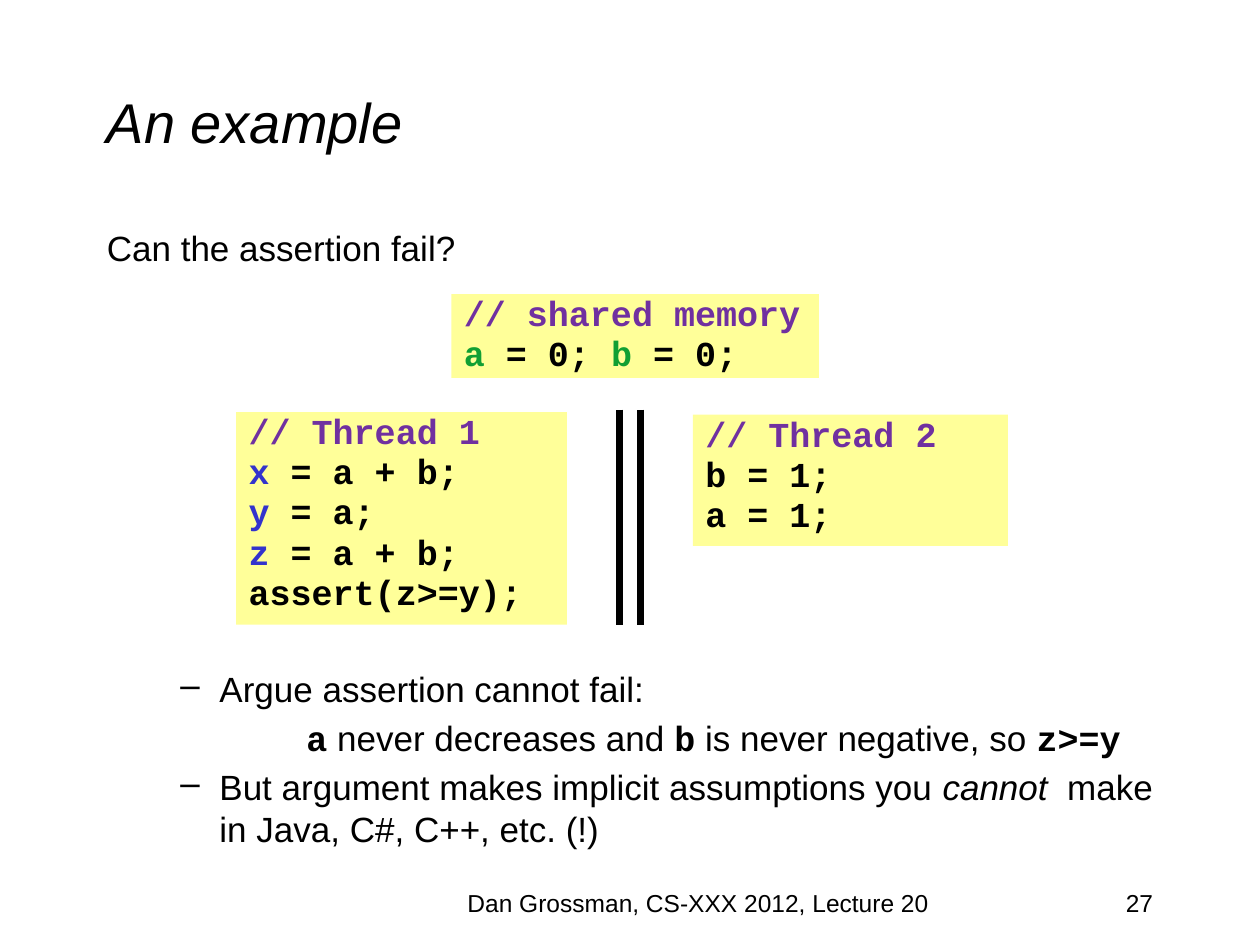
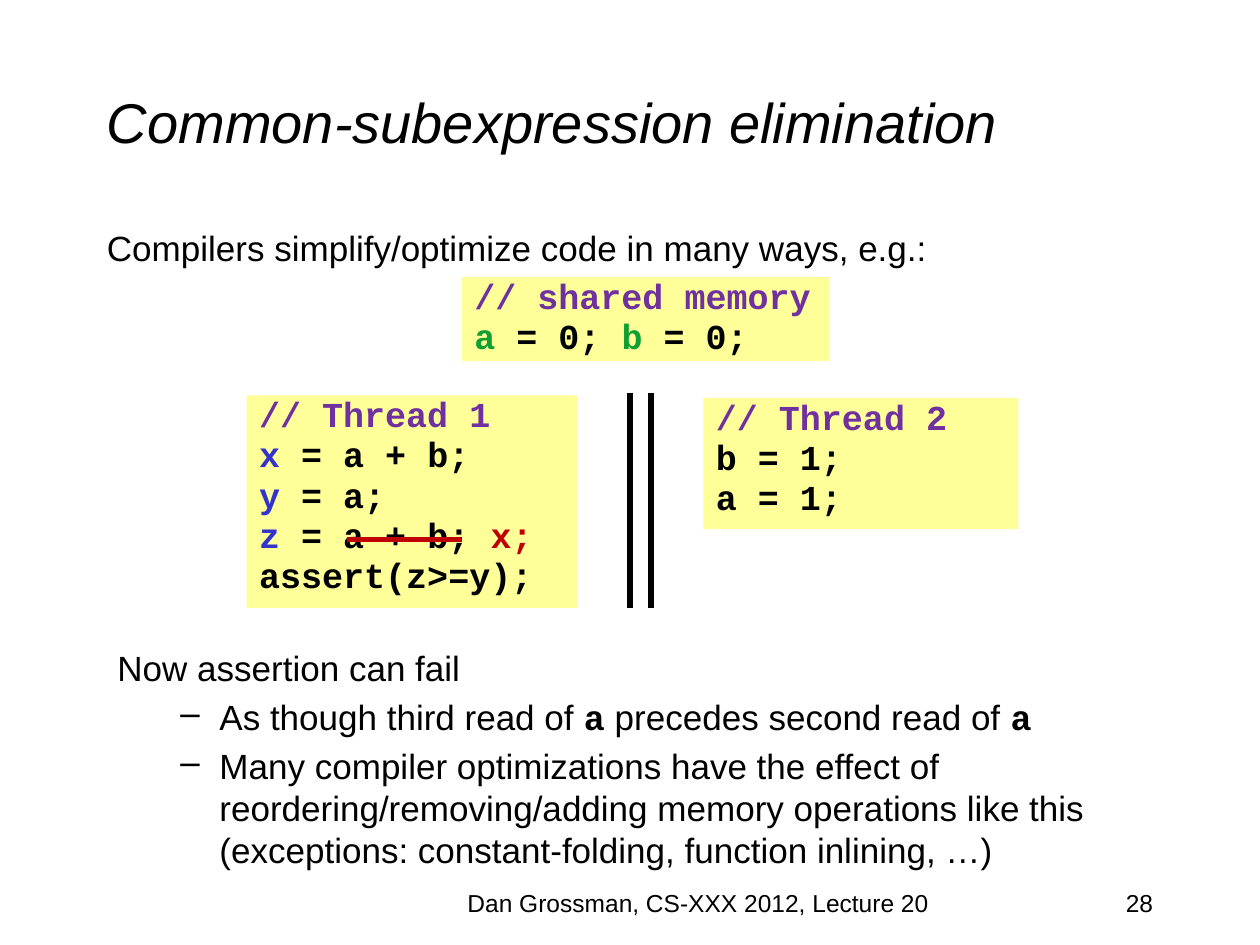
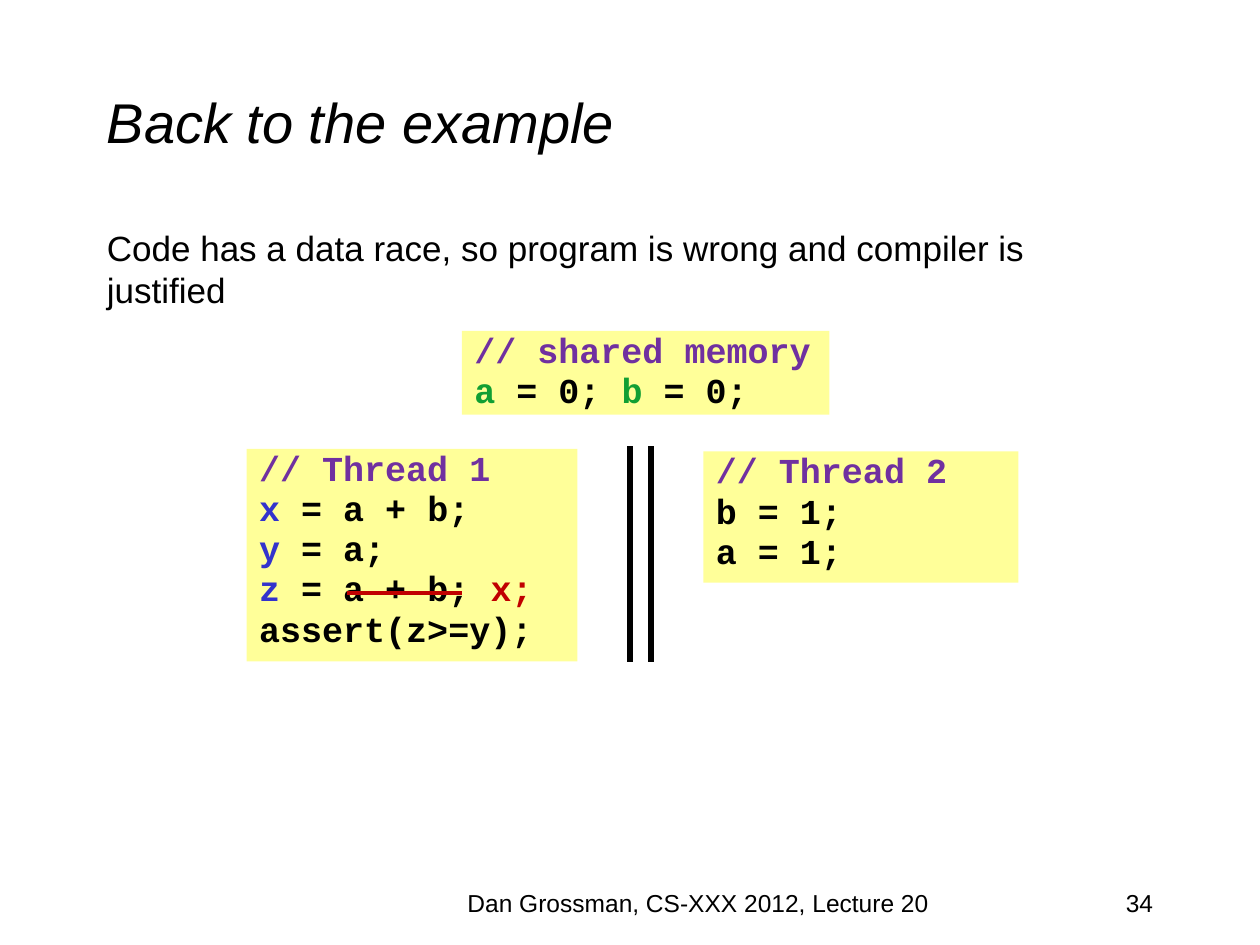
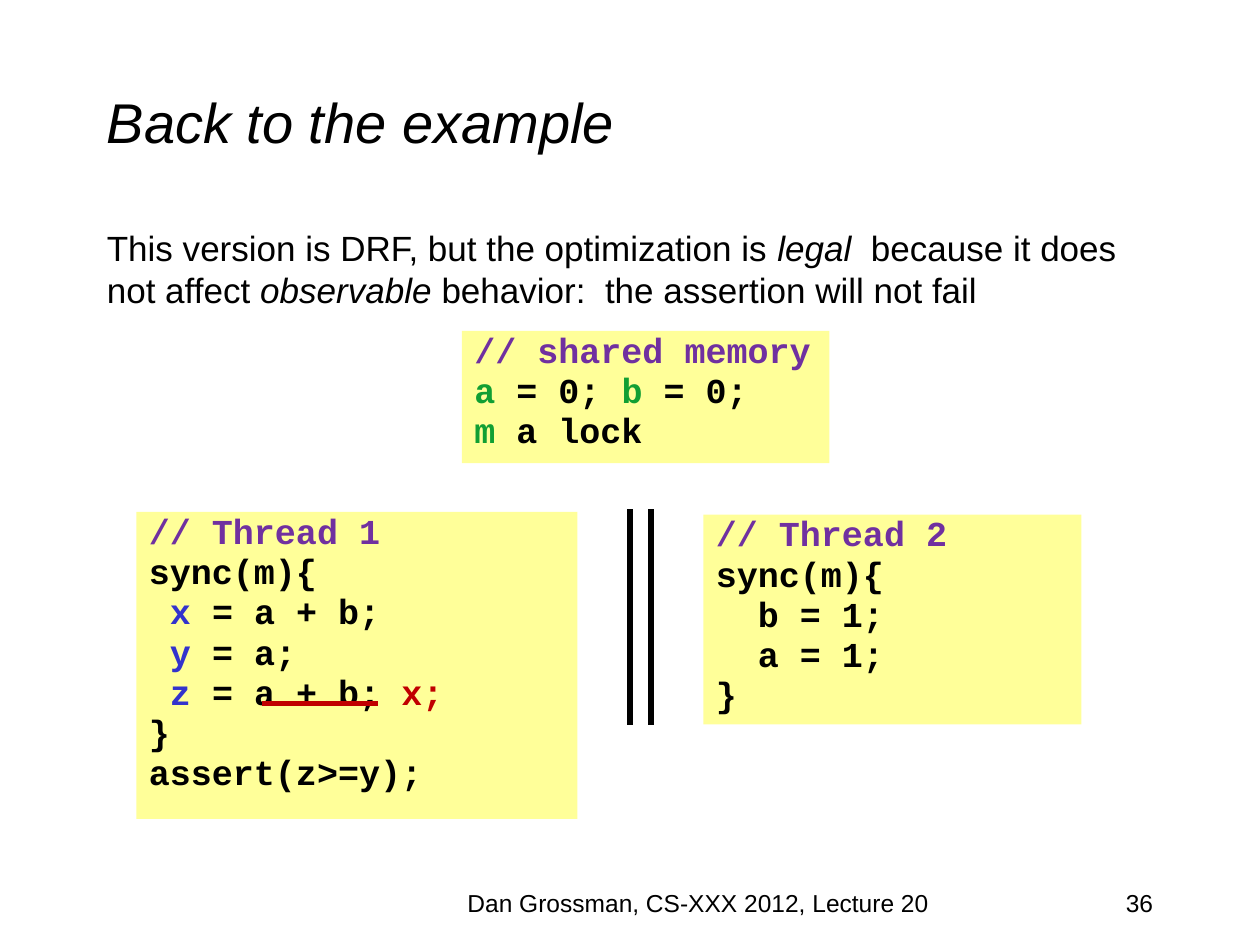
from typing import NamedTuple

from lxml.etree import SubElement
from pptx import Presentation
from pptx.dml.color import RGBColor
from pptx.enum.shapes import MSO_CONNECTOR as Link, MSO_SHAPE as Shape
from pptx.enum.text import MSO_ANCHOR as Anchor, PP_ALIGN as Align
from pptx.oxml.ns import qn
from pptx.util import Inches, Pt

BLACK = RGBColor(0x00, 0x00, 0x00)
PURPLE = RGBColor(0x70, 0x30, 0xA0)
GREEN = RGBColor(0x11, 0x9F, 0x33)
BLUE = RGBColor(0x33, 0x33, 0xCC)
RED = RGBColor(0xC0, 0x00, 0x00)
YELLOW = RGBColor(0xFF, 0xFF, 0x99)

SANS, MONO = "Arial", "Courier New"
FOOTER = "Dan Grossman, CS-XXX 2012, Lecture 20"
COLS, ROWS = 120, 90
WIDTH, HEIGHT = Inches(10), Inches(7.5)


class Run(NamedTuple):
    text: str
    color: RGBColor = BLACK
    font: str = SANS
    bold: bool = False
    italic: bool = False


class Para(NamedTuple):
    runs: list[Run]
    margin: float = 0
    indent: float = 0
    bullet: str = ""
    gap: float = 4
    pitch: float | None = None


class Box(NamedTuple):
    """A place on the grid, in columns and rows."""
    left: float
    top: float
    width: float
    height: float


class Strike(NamedTuple):
    left: float
    drop: float


class Scene(NamedTuple):
    """Code boxes around a pair of bars; heights are in rows."""
    bar: float
    top: float
    shared: list[Para]
    first: list[Para]
    second: list[Para]
    lift: float = 11
    heights: tuple[float, float, float] = (8, 20.25, 12.5)
    widths: tuple[float, float] = (31.5, 30)
    strike: Strike | None = None


class Page(NamedTuple):
    number: int
    title: str
    lead: list[Run]
    scene: Scene
    notes: list[Para] = []
    place: Box = Box(10, 63, 102, 20)


def col(n: float) -> int:
    return round(WIDTH * n / COLS)


def row(n: float) -> int:
    return round(HEIGHT * n / ROWS)


def mono(text: str, color: RGBColor = BLACK) -> Run:
    return Run(text, color, MONO, True)


def slant(text: str) -> Run:
    return Run(text, italic=True)


def line(*runs: Run) -> Para:
    return Para(list(runs), 0.38, -0.38, pitch=19)


def dash(*runs: Run) -> Para:
    return Para(list(runs), 0.81, -0.31, "–")


def assign(name: str, value: str, color: RGBColor = BLUE) -> list[Run]:
    return [mono(f"{name} ", color), mono(f"= {value}")]


def write(frame, paras: list[Para], size: float = 20, align=Align.LEFT,
          anchor=Anchor.TOP) -> None:
    frame.word_wrap = True
    frame.vertical_anchor = anchor
    for i, para in enumerate(paras):
        p = frame.paragraphs[0] if i == 0 else frame.add_paragraph()
        p.alignment = align
        p.space_before = Pt(para.gap)
        if para.pitch:
            p.line_spacing = Pt(para.pitch)
        props = p._p.get_or_add_pPr()
        props.set("marL", str(Inches(para.margin)))
        props.set("indent", str(Inches(para.indent)))
        if para.bullet:
            SubElement(props, qn("a:buChar")).set("char", para.bullet)
        for part in para.runs:
            run = p.add_run()
            run.text = part.text
            font = run.font
            font.name, font.size = part.font, Pt(size)
            font.bold, font.italic = part.bold, part.italic
            font.color.rgb = part.color


def place(box: Box) -> tuple[int, int, int, int]:
    return col(box.left), row(box.top), col(box.width), row(box.height)


def label(slide, box: Box, paras: list[Para], size: float = 20,
          align=Align.LEFT, anchor=Anchor.TOP) -> None:
    write(slide.shapes.add_textbox(*place(box)).text_frame,
          paras, size, align, anchor)


def panel(slide, box: Box, code: list[Para]) -> None:
    shape = slide.shapes.add_shape(Shape.RECTANGLE, *place(box))
    shape.shadow.inherit = False
    shape.fill.solid()
    shape.fill.fore_color.rgb = YELLOW
    shape.line.fill.background()
    write(shape.text_frame, code)


def rule(slide, x: float, y: float, across: float, down: float,
         color: RGBColor, weight: float) -> None:
    link = slide.shapes.add_connector(
        Link.STRAIGHT, col(x), row(y), col(x + across), row(y + down))
    link.line.color.rgb = color
    link.line.width = Pt(weight)
    SubElement(link._element.spPr, qn("a:effectLst"))


def draw(slide, scene: Scene) -> None:
    bar, top = scene.bar, scene.top
    tall, (wide, slim) = scene.heights, scene.widths
    panel(slide, Box(bar - 16, top - scene.lift, 35, tall[0]), scene.shared)
    panel(slide, Box(bar - 5 - wide, top + 0.25, wide, tall[1]), scene.first)
    panel(slide, Box(bar + 7, top + 0.5, slim, tall[2]), scene.second)
    for x in (bar, bar + 2):
        rule(slide, x, top, 0, 20.5, BLACK, 3.75)
    if scene.strike:
        rule(slide, scene.strike.left, top + scene.strike.drop, 11, 0, RED, 2.5)


def build(deck, page: Page) -> None:
    slide = deck.slides.add_slide(deck.slide_layouts[6])
    label(slide, Box(9, 4, 102, 15), [Para([slant(page.title)], gap=0)],
          32, anchor=Anchor.MIDDLE)
    label(slide, Box(9, 21, 102, 10), [Para(page.lead)])
    label(slide, Box(86, 84, 25, 6), [Para([Run(str(page.number))], gap=0)],
          14, Align.RIGHT)
    label(slide, Box(33, 84, 67, 6), [Para([Run(FOOTER)], gap=0)],
          14, Align.CENTER)
    draw(slide, page.scene)
    if page.notes:
        label(slide, page.place, page.notes)


SHARED = [line(mono("// shared memory", PURPLE)),
          line(*assign("a", "0; ", GREEN), *assign("b", "0;", GREEN))]
HEAD1 = line(mono("// Thread 1", PURPLE))
HEAD2 = line(mono("// Thread 2", PURPLE))
OPEN, CLOSE = line(mono("sync(m){")), line(mono("}"))
CHECK = line(mono("assert(z>=y);"))


def reads(pad: str = "", swap: bool = True) -> list[Para]:
    """The three reads of thread 1, the last with its red substitute."""
    last = [mono(" "), mono("x;", RED)] if swap else []
    return [line(*assign(f"{pad}x", "a + b;")),
            line(*assign(f"{pad}y", "a;")),
            line(*assign(f"{pad}z", "a + b;"), *last)]


def stores(pad: str = "") -> list[Para]:
    return [line(mono(f"{pad}{name} = 1;")) for name in "ba"]


PLAIN = Scene(59, 39, SHARED, [HEAD1, *reads(swap=False), CHECK],
              [HEAD2, *stores()])
SWAP = PLAIN._replace(bar=60, top=37.4, first=[HEAD1, *reads(), CHECK],
                      strike=Strike(33, 14))
LOCK = Scene(60, 48.5,
             [*SHARED, line(mono("m", GREEN), mono(" a lock"))],
             [HEAD1, OPEN, *reads(" "), CLOSE, CHECK],
             [HEAD2, OPEN, *stores("  "), CLOSE],
             17, (12.6, 29.25, 20), (42, 36), Strike(25, 18.5))

PAGES = [
    Page(27, "An example", [Run("Can the assertion fail?")], PLAIN, [
        dash(Run("Argue assertion cannot fail:")),
        Para([mono("a"), Run(" never decreases and "), mono("b"),
              Run(" is never negative, so "), mono("z>=y")], 1.5),
        dash(Run("But argument makes implicit assumptions you "),
             slant("cannot"), Run("  make in Java, C#, C++, etc. (!)")),
    ]),
    Page(28, "Common-subexpression elimination",
         [Run("Compilers simplify/optimize code in many ways, e.g.:")], SWAP, [
             Para([Run("Now assertion can fail")]),
             dash(Run("As though third read of "), mono("a"),
                  Run(" precedes second read of "), mono("a")),
             dash(Run("Many compiler optimizations have the effect of "
                      "reordering/removing/adding memory operations like this "
                      "(exceptions: constant-folding, function inlining, …)")),
         ], Box(10, 61, 102, 22)),
    Page(34, "Back to the example",
         [Run("Code has a data race, so program is wrong and compiler is "
              "justified")], SWAP._replace(top=42.5)),
    Page(36, "Back to the example",
         [Run("This version is DRF, but the optimization is "), slant("legal"),
          Run("  because it does not affect "), slant("observable"),
          Run(" behavior:  the assertion will not fail")], LOCK),
]


def main() -> None:
    deck = Presentation()
    deck.slide_width, deck.slide_height = WIDTH, HEIGHT
    for page in PAGES:
        build(deck, page)
    deck.save("out.pptx")


if __name__ == "__main__":
    main()
